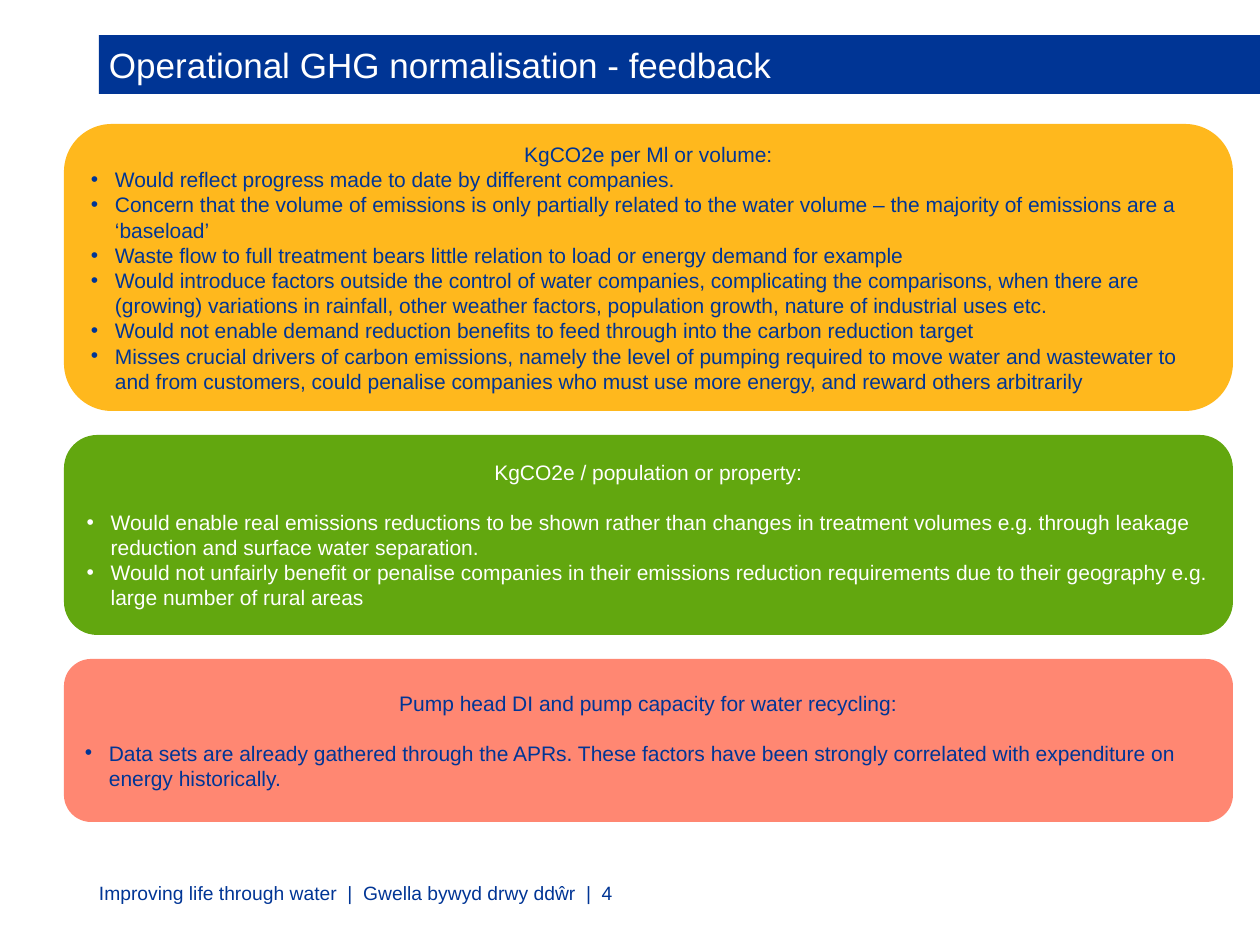
"""Build the slide on operational GHG normalisation feedback."""
from dataclasses import dataclass

from lxml import etree
from pptx import Presentation
from pptx import util as u
from pptx.dml.color import RGBColor
from pptx.enum import shapes, text
from pptx.oxml.ns import qn


@dataclass(frozen=True)
class Theme:
    """Colours and type sizes of the slide."""

    font: str = "Arial"
    navy: str = "003595"
    white: str = "FFFFFF"
    amber: str = "FFB81D"
    green: str = "62A70F"
    coral: str = "FF8772"
    title_size: int = 20
    body_size: int = 12
    footer_size: int = 11


THEME = Theme()
CARD_LEFT, CARD_WIDTH, CARD_TOP, CARD_GAP = 64, 1169, 124, 24
BULLET_INDENT = 24
CARDS = [
    {
        "height": 287, "fill": THEME.amber, "color": THEME.navy, "gap": 0,
        "heading": "KgCO2e per Ml or volume:",
        "bullets": [
            "Would reflect progress made to date by different companies.",
            "Concern that the volume of emissions is only partially related to the water volume – "
            "the majority of emissions are a ‘baseload’",
            "Waste flow to full treatment bears little relation to load or energy demand for example",
            "Would introduce factors outside the control of water companies, complicating the "
            "comparisons, when there are (growing) variations in rainfall, other weather factors, "
            "population growth, nature of industrial uses etc.",
            "Would not enable demand reduction benefits to feed through into the carbon reduction target",
            "Misses crucial drivers of carbon emissions, namely the level of pumping required to move "
            "water and wastewater to and from customers, could penalise companies who must use more "
            "energy, and reward others arbitrarily",
        ],
    },
    {
        "height": 200, "fill": THEME.green, "color": THEME.white, "gap": 14,
        "heading": "KgCO2e / population or property:",
        "bullets": [
            "Would enable real emissions reductions to be shown rather than changes in treatment "
            "volumes e.g. through leakage reduction and surface water separation.",
            "Would not unfairly benefit or penalise companies in their emissions reduction "
            "requirements due to their geography e.g. large number of rural areas",
        ],
    },
    {
        "height": 163, "fill": THEME.coral, "color": THEME.navy, "gap": 14,
        "heading": "Pump head DI and pump capacity for water recycling:",
        "bullets": [
            "Data sets are already gathered through the APRs. These factors have been strongly "
            "correlated with expenditure on energy historically.",
        ],
    },
]


def px(value):
    """Turn pixels into EMU."""
    return u.Inches(value / 126)


def set_values(target, values):
    """Set each named attribute on the target."""
    for name, value in values.items():
        setattr(target, name, value)


def set_frame(frame, left=0, top=0, right=0, bottom=0):
    """Wrap and middle-anchor a text frame with margins in pixels."""
    set_values(frame, {
        "word_wrap": True, "vertical_anchor": text.MSO_ANCHOR.MIDDLE,
        "margin_left": px(left), "margin_top": px(top),
        "margin_right": px(right), "margin_bottom": px(bottom),
    })


def write(paragraph, words, size, color, alignment=text.PP_ALIGN.LEFT):
    """Fill a paragraph with one formatted run."""
    paragraph.alignment = alignment
    run = paragraph.add_run()
    run.text = words
    set_values(run.font, {"name": THEME.font, "size": u.Pt(size)})
    run.font.color.rgb = RGBColor.from_string(color)


def add_bullet(paragraph):
    """Give a paragraph a hanging bullet."""
    properties = paragraph._p.get_or_add_pPr()
    properties.set("marL", str(px(BULLET_INDENT)))
    properties.set("indent", str(-px(BULLET_INDENT)))
    etree.SubElement(properties, qn("a:buFont")).set("typeface", THEME.font)
    etree.SubElement(properties, qn("a:buChar")).set("char", "•")


def add_block(slide, kind, bounds, fill):
    """Add a filled shape without outline or shadow."""
    shape = slide.shapes.add_shape(kind, *map(px, bounds))
    shape.shadow.inherit = False
    shape.fill.solid()
    shape.fill.fore_color.rgb = RGBColor.from_string(fill)
    shape.line.fill.background()
    return shape


def add_title(slide):
    """Add the title band that runs to the right edge."""
    shape = add_block(slide, shapes.MSO_SHAPE.RECTANGLE, (99, 35, 1161, 59), THEME.navy)
    set_frame(shape.text_frame, 10, 5, 49, 5)
    write(shape.text_frame.paragraphs[0], "Operational GHG normalisation - feedback",
          THEME.title_size, THEME.white)


def add_card(slide, top, card):
    """Add a rounded card with a centred heading and bullets."""
    bounds = (CARD_LEFT, top, CARD_WIDTH, card["height"])
    shape = add_block(slide, shapes.MSO_SHAPE.ROUNDED_RECTANGLE, bounds, card["fill"])
    frame = shape.text_frame
    set_frame(frame, 13, 6, 13, 6)
    write(frame.paragraphs[0], card["heading"], THEME.body_size, card["color"],
          text.PP_ALIGN.CENTER)
    for index, words in enumerate(card["bullets"]):
        paragraph = frame.add_paragraph()
        if index == 0:
            paragraph.space_before = u.Pt(card["gap"])
        add_bullet(paragraph)
        write(paragraph, words, THEME.body_size, card["color"])


def add_footer(slide):
    """Add the footer line with the slide number."""
    box = slide.shapes.add_textbox(*map(px, (99, 881, 645, 24)))
    set_frame(box.text_frame)
    write(box.text_frame.paragraphs[0],
          "Improving life through water  |  Gwella bywyd drwy ddŵr  |  4",
          THEME.footer_size, THEME.navy, text.PP_ALIGN.JUSTIFY)


def main():
    """Build and save the presentation."""
    presentation = Presentation()
    set_values(presentation, {"slide_width": px(1260), "slide_height": px(945)})
    slide = presentation.slides.add_slide(presentation.slide_layouts[6])
    add_title(slide)
    top = CARD_TOP
    for card in CARDS:
        add_card(slide, top, card)
        top += card["height"] + CARD_GAP
    add_footer(slide)
    presentation.save("out.pptx")


if __name__ == "__main__":
    main()
